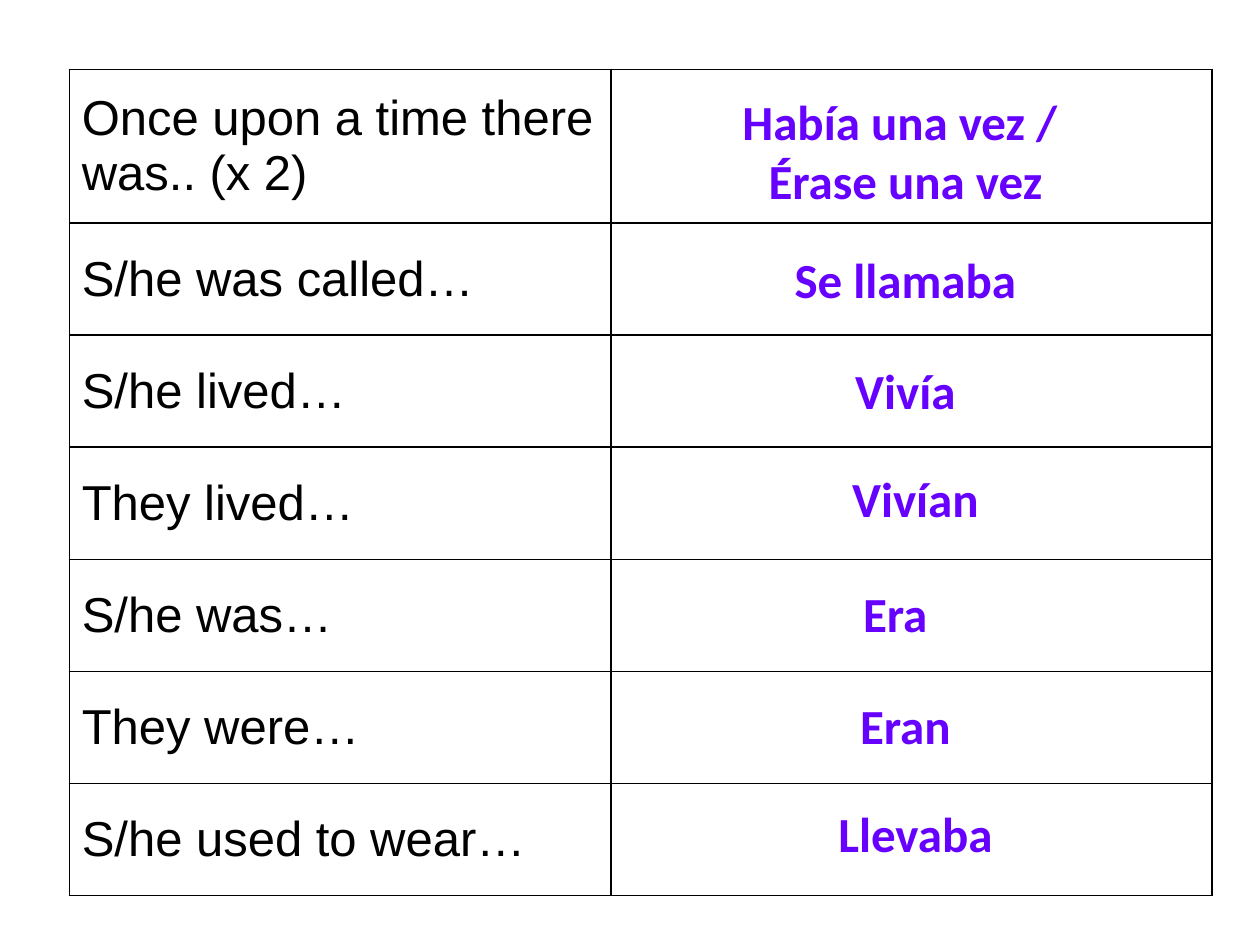
from dataclasses import dataclass

from lxml import etree
from pptx import Presentation
from pptx.dml.color import RGBColor
from pptx.enum.text import MSO_ANCHOR, PP_ALIGN
from pptx.oxml.ns import qn
from pptx.util import Inches, Pt

LEFT, CENTER = PP_ALIGN.LEFT, PP_ALIGN.CENTER
MIDDLE = MSO_ANCHOR.MIDDLE
COLORS = {"text": "000000", "answer": "6600FF", "border": "000000"}

TABLE_LEFT, TABLE_TOP = 0.55, 0.55
COL_WIDTHS = (4.3, 4.77)
FIRST_ROW, OTHER_ROW = 1.22, 0.89
ANSWER_WIDTH = 3.75


@dataclass
class Phrase:
    english: str
    spanish: str
    left: float
    top: float
    height: float = 0.57


PHRASES = [
    Phrase("Once upon a time there was.. (x 2)", "Había una vez / \vÉrase una vez", 5.31, 0.68, 1.04),
    Phrase("S/he was called…", "Se llamaba", 5.31, 1.93),
    Phrase("S/he lived…", "Vivía", 5.31, 2.81),
    Phrase("They lived…", "Vivían", 5.39, 3.67),
    Phrase("S/he was…", "Era", 5.23, 4.58),
    Phrase("They were…", "Eran", 5.31, 5.47),
    Phrase("S/he used to wear…", "Llevaba", 5.39, 6.33),
]


def write(tf, text: str, *, font: str, color: str, size: float = 28,
          bold: bool = False, align=LEFT) -> None:
    """Fill the first paragraph; a vertical tab becomes a line break."""
    p = tf.paragraphs[0]
    p.text = text
    p.alignment = align
    for r in p.runs:
        r.font.name = font
        r.font.size = Pt(size)
        r.font.bold = bold
        r.font.color.rgb = RGBColor.from_string(COLORS[color])


def add_borders(cell, width: float = 1) -> None:
    tc_pr = cell._tc.get_or_add_tcPr()
    for i, side in enumerate(("lnL", "lnR", "lnT", "lnB")):
        ln = etree.Element(qn(f"a:{side}"), w=str(Pt(width)))
        fill = etree.SubElement(ln, qn("a:solidFill"))
        etree.SubElement(fill, qn("a:srgbClr"), val=COLORS["border"])
        tc_pr.insert(i, ln)


def add_phrase_table(s, phrases: list[Phrase]) -> None:
    heights = [FIRST_ROW] + [OTHER_ROW] * (len(phrases) - 1)
    table = s.shapes.add_table(
        len(phrases), len(COL_WIDTHS), Inches(TABLE_LEFT), Inches(TABLE_TOP),
        Inches(sum(COL_WIDTHS)), Inches(sum(heights))).table
    table.first_row = table.horz_banding = False
    for col, width in zip(table.columns, COL_WIDTHS):
        col.width = Inches(width)
    for row, height, phrase in zip(table.rows, heights, phrases):
        row.height = Inches(height)
        for cell in row.cells:
            cell.fill.background()
            cell.vertical_anchor = MIDDLE
            add_borders(cell)
        write(row.cells[0].text_frame, phrase.english, font="Arial", color="text")


def add_answer(s, phrase: Phrase) -> None:
    box = s.shapes.add_textbox(Inches(phrase.left), Inches(phrase.top),
                               Inches(ANSWER_WIDTH), Inches(phrase.height))
    tf = box.text_frame
    tf.word_wrap = True
    write(tf, phrase.spanish, font="Calibri", color="answer", bold=True, align=CENTER)


def main() -> None:
    prs = Presentation()
    prs.slide_width, prs.slide_height = Inches(10), Inches(7.5)
    s = prs.slides.add_slide(prs.slide_layouts[6])
    add_phrase_table(s, PHRASES)
    for phrase in PHRASES:
        add_answer(s, phrase)
    prs.save("out.pptx")


if __name__ == "__main__":
    main()
